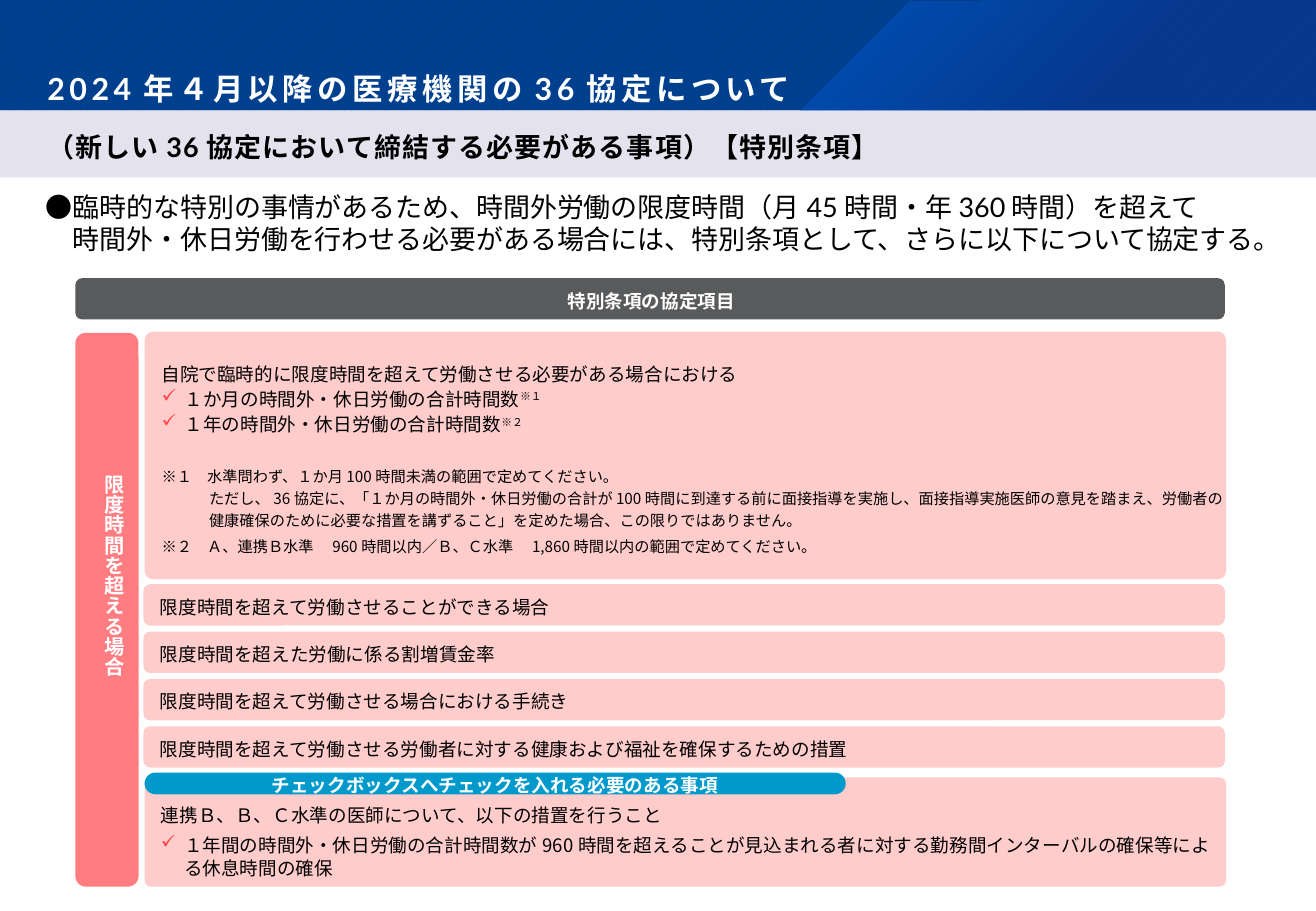
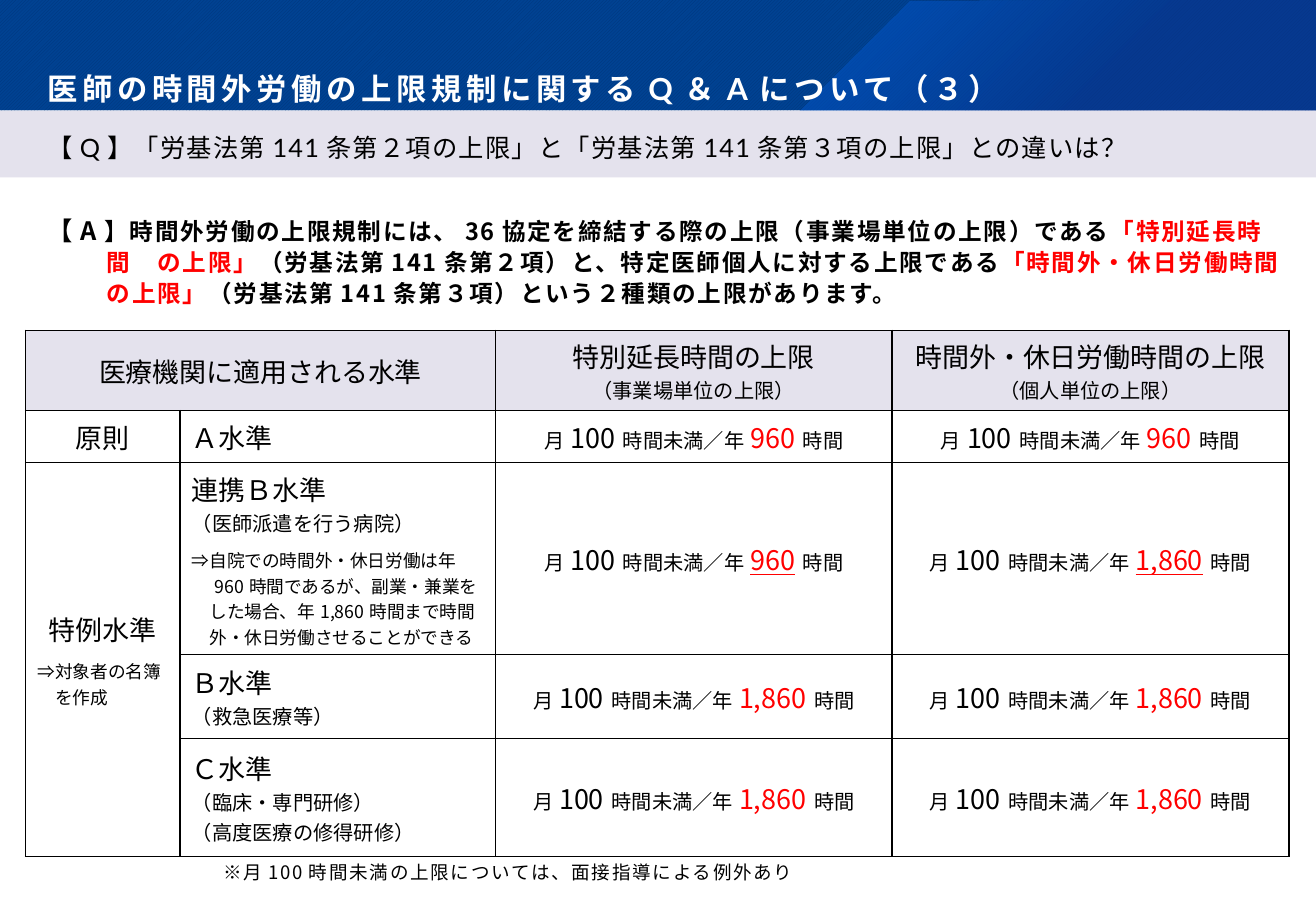
from dataclasses import dataclass

from lxml import etree
from pptx import Presentation
from pptx.dml.color import RGBColor
from pptx.enum.dml import MSO_PATTERN
from pptx.enum.shapes import MSO_SHAPE
from pptx.enum.text import MSO_ANCHOR, PP_ALIGN
from pptx.oxml import parse_xml
from pptx.oxml.ns import nsdecls, qn
from pptx.util import Inches, Pt

RECT, ROUND = MSO_SHAPE.RECTANGLE, MSO_SHAPE.ROUNDED_RECTANGLE
MID, LOW, TOP = MSO_ANCHOR.MIDDLE, MSO_ANCHOR.BOTTOM, MSO_ANCHOR.TOP
LEFT, CENTER = PP_ALIGN.LEFT, PP_ALIGN.CENTER
DIAG = MSO_PATTERN.DARK_UPWARD_DIAGONAL
WIDE, HIGH, BAND = 10.83, 7.5, 0.91
SANS, LATO = "Noto Sans CJK JP", "Lato"
BLACK, WHITE, RED = "000000", "FFFFFF", "FF0000"
LILAC, PINK, ROSE = "E4E2ED", "FFCCCC", "FF7C80"
GRAY, BLUE, TICK = "585A5C", "0099CC", "FF4347"
INSET = (0.12, 0.08, 0.1, 0.05)


@dataclass
class Run:
    """A piece of text in one format."""
    text: str
    size: float = 11
    color: str = BLACK
    bold: bool = False
    font: str = SANS
    gap: float = 0
    under: bool = False
    base: int = 0


@dataclass
class Para:
    """A paragraph with its spacing and indents."""
    runs: list
    align: int = LEFT
    line: object = None
    before: float = 0
    after: float = 0
    left: float = 0
    first: float = 0
    mark: str = ""


def rgb(code):
    """Return the colour for a hex string."""
    return RGBColor.from_string(code)


def style(run, look):
    """Format a run."""
    font = run.font
    font.size, font.bold, font.name = Pt(look.size), look.bold, look.font
    font.color.rgb = rgb(look.color)
    font.underline = look.under
    props = font._element
    if look.gap:
        props.set("spc", str(round(look.gap * 100)))
    if look.base:
        props.set("baseline", str(look.base * 1000))
    east = etree.Element(qn("a:ea"), typeface=SANS)
    props.find(qn("a:latin")).addnext(east)


def write(frame, paras):
    """Fill a text frame with paragraphs."""
    for i, para in enumerate(paras):
        item = frame.paragraphs[0] if i == 0 else frame.add_paragraph()
        item.alignment = para.align
        item.space_before, item.space_after = Pt(para.before), Pt(para.after)
        if para.line:
            item.line_spacing = para.line
        props = item._p.get_or_add_pPr()
        props.set("marL", str(Inches(para.left)))
        props.set("indent", str(Inches(para.first)))
        if para.mark:
            color = etree.SubElement(props, qn("a:buClr"))
            etree.SubElement(color, qn("a:srgbClr"), val=TICK)
            etree.SubElement(props, qn("a:buChar"), char=para.mark)
        for look in para.runs:
            run = item.add_run()
            run.text = look.text
            style(run, look)


def fit(frame, paras, anchor, inset):
    """Set the margins and anchor of a frame and fill it."""
    frame.word_wrap, frame.vertical_anchor = True, anchor
    (frame.margin_left, frame.margin_top,
     frame.margin_right, frame.margin_bottom) = map(Inches, inset)
    write(frame, paras)


def box(slide, at, fill, paras=(), kind=ROUND, adj=None, anchor=MID, inset=INSET):
    """Add a filled shape with text."""
    shape = slide.shapes.add_shape(kind, *map(Inches, at))
    shape.shadow.inherit = False
    shape.fill.solid()
    shape.fill.fore_color.rgb = rgb(fill)
    shape.line.fill.background()
    if adj is not None:
        shape.adjustments[0] = adj
    fit(shape.text_frame, paras, anchor, inset)
    return shape


def label(slide, at, paras, anchor=TOP, inset=(0.1, 0.05, 0.1, 0.05)):
    """Add a text box."""
    frame = slide.shapes.add_textbox(*map(Inches, at)).text_frame
    fit(frame, paras, anchor, inset)
    return frame


def sheen(slide):
    """Add the slanted gradient at the right of the title band."""
    pen = slide.shapes.build_freeform(Inches(7.49), Inches(0.01))
    spots = [(WIDE, 0), (WIDE, BAND), (6.58, BAND)]
    pen.add_line_segments([(Inches(x), Inches(y)) for x, y in spots])
    shape = pen.convert_to_shape()
    shape.shadow.inherit = False
    shape.line.fill.background()
    shape.fill.gradient()
    stops = "".join(
        f'<a:gs pos="{pos}000"><a:srgbClr val="{color}">'
        f'<a:alpha val="{alpha}000"/></a:srgbClr></a:gs>'
        for pos, color, alpha in [(0, "0064DF", 50), (62, "0C338E", 55)])
    grad = parse_xml(
        f'<a:gradFill {nsdecls("a")} rotWithShape="1"><a:gsLst>{stops}</a:gsLst>'
        '<a:path path="circle"><a:fillToRect r="100000" b="100000"/></a:path>'
        '</a:gradFill>')
    props = shape._element.spPr
    props.replace(props.find(qn("a:gradFill")), grad)


def start(deck, title, lead):
    """Add a slide with its title band and lead band."""
    slide = deck.slides.add_slide(deck.slide_layouts[6])
    band = box(slide, (0, 0, WIDE, BAND), BLUE, kind=RECT)
    band.fill.patterned()
    band.fill.pattern = DIAG
    band.fill.fore_color.rgb = rgb("003579")
    band.fill.back_color.rgb = rgb("004292")
    sheen(slide)
    head = Run(title, 18, WHITE, True, LATO, 2.7)
    label(slide, (0, 0, WIDE, BAND), [Para([head], line=0.9)], LOW,
          (0.39, 0.36, 0.36, 0.14))
    box(slide, (0, BAND, WIDE, 0.55), LILAC, [Para([lead])], RECT,
        inset=(0.39, 0.05, 0.39, 0))
    return slide


def limits(slide, left, top, wide):
    """Add the box on the hour limits with its notes."""
    row = Pt(15)
    ticks = [Para([Run(text), Run(note, base=30)], line=row,
                  left=0.19, first=-0.19, mark="✓")
             for text, note in [("１か月の時間外・休日労働の合計時間数", "※１"),
                                ("１年の時間外・休日労働の合計時間数", "※２")]]
    paras = [
        Para([Run("自院で臨時的に限度時間を超えて労働させる必要がある場合における")], line=row),
        *ticks,
        Para([Run("※１　水準問わず、１か月100時間未満の範囲で定めてください。", 9)],
             line=row, before=15, left=0.29, first=-0.29),
        Para([Run("ただし、36協定に、「１か月の時間外・休日労働の合計が100時間に到達する前に"
                  "面接指導を実施し、面接指導実施医師の意見を踏まえ、労働者の"
                  "健康確保のために必要な措置を講ずること」を定めた場合、この限りではありません。", 9)],
             line=Pt(13), left=0.39),
        Para([Run("※２　Ａ、連携Ｂ水準　960時間以内／Ｂ、Ｃ水準　"
                  "1,860時間以内の範囲で定めてください。", 9)], line=row)]
    box(slide, (left, top, wide, 2.04), PINK, paras, adj=0.034,
        inset=(0.12, 0.08, 0, 0.05))


def checks(slide, left, top, wide):
    """Add the box on the checkbox item with its pill heading."""
    line = Pt(13.6)
    box(slide, (left, top + 0.04, wide, 0.9), PINK, [
        Para([Run("連携Ｂ、Ｂ、Ｃ水準の医師について、以下の措置を行うこと")], line=line),
        Para([Run("１年間の時間外・休日労働の合計時間数が960時間を超えることが見込まれる者に対する"
                  "勤務間インターバルの確保等による休息時間の確保")],
             line=line, before=4, left=0.19, first=-0.19, mark="✓")],
        adj=0.058, anchor=LOW, inset=(0.12, 0.08, 0.08, 0.05))
    pill = Run("チェックボックスへチェックを入れる必要のある事項", 11, WHITE, True, "Calibri")
    box(slide, (left, top, 5.77, 0.18), BLUE, [Para([pill], CENTER)], adj=0.5,
        inset=(0.1, 0.08, 0.1, 0.05))


def clauses(slide, left, top):
    """Add the panel of special clause items."""
    wide, inner = 8.9, left + 0.57
    head = Run("特別条項の協定項目", 11, WHITE, True)
    box(slide, (left, top, 9.46, 0.34), GRAY, [Para([head], CENTER)])
    box(slide, (left, top + 0.45, 0.52, 4.56), ROSE)
    side = Run("限度時間を超える場合", 12, WHITE, True)
    frame = label(slide, (left - 0.1, top + 1.52, 0.57, 2.06), [Para([side], CENTER)])
    frame._txBody.bodyPr.set("vert", "eaVert")
    limits(slide, inner, top + 0.44, wide)
    items = ["限度時間を超えて労働させることができる場合",
             "限度時間を超えた労働に係る割増賃金率",
             "限度時間を超えて労働させる場合における手続き",
             "限度時間を超えて労働させる労働者に対する健康および福祉を確保するための措置"]
    for i, text in enumerate(items):
        box(slide, (inner - 0.01, top + 2.52 + 0.39 * i, wide, 0.34), PINK,
            [Para([Run(text)])])
    checks(slide, inner, top + 4.07, wide)


def hours(year, under=False):
    """Return the cell text for a monthly and yearly limit."""
    return [Para([Run("月", 12), Run("100", 16), Run("時間未満／年", 12),
                  Run(year, 16, RED, under=under), Run("時間", 12)], CENTER)]


def lines(name, *subs, align=LEFT, after=0):
    """Return a large line and the small lines under it."""
    small = [Para([Run(text, 12)], align) for text in subs]
    paras = [Para([Run(name, 16)], align), *small]
    paras[-1].after = after
    return paras


def notes(*texts):
    """Return lines of fine print."""
    return [Para([Run(text, 10.5)]) for text in texts]


def edge(cell):
    """Draw a thin black border around a cell."""
    props = cell._tc.get_or_add_tcPr()
    for i, side in enumerate(("lnL", "lnR", "lnT", "lnB")):
        props.insert(i, parse_xml(
            f'<a:{side} {nsdecls("a")} w="12700"><a:solidFill>'
            f'<a:srgbClr val="{BLACK}"/></a:solidFill></a:{side}>'))


def levels(slide, left, top):
    """Add the table of limits by level."""
    cols, rows = [1.27, 2.6, 3.26, 3.27], [0.66, 0.43, 1.58, 0.69, 0.97]
    cells = [
        [lines("医療機関に適用される水準", align=CENTER), [],
         lines("特別延長時間の上限", "（事業場単位の上限）", align=CENTER),
         lines("時間外・休日労働時間の上限", "（個人単位の上限）", align=CENTER)],
        [lines("原則", align=CENTER), lines("Ａ水準"), hours("960"), hours("960")],
        [lines("特例水準", align=CENTER, after=6) + notes("⇒対象者の名簿", "　を作成"),
         lines("連携Ｂ水準", "（医師派遣を行う病院）", after=6)
         + notes("⇒自院での時間外・休日労働は年", "　960時間であるが、副業・兼業を",
                 "　した場合、年1,860時間まで時間", "　外・休日労働させることができる"),
         hours("960", True), hours("1,860", True)],
        [[], lines("Ｂ水準", "（救急医療等）"), hours("1,860"), hours("1,860")],
        [[], lines("Ｃ水準", "（臨床・専門研修）", "（高度医療の修得研修）"),
         hours("1,860"), hours("1,860")]]
    at = map(Inches, (left, top, sum(cols), sum(rows)))
    table = slide.shapes.add_table(len(rows), len(cols), *at).table
    table.first_row = table.horz_banding = False
    for col, wide in zip(table.columns, cols):
        col.width = Inches(wide)
    for r, row in enumerate(cells):
        table.rows[r].height = Inches(rows[r])
        for c, paras in enumerate(row):
            cell = table.cell(r, c)
            cell.vertical_anchor = MID
            cell.fill.solid()
            cell.fill.fore_color.rgb = rgb(WHITE if r else LILAC)
            edge(cell)
            write(cell.text_frame, paras)
    table.cell(0, 0).merge(table.cell(0, 1))
    table.cell(2, 0).merge(table.cell(4, 0))


def clause_slide(deck):
    """Build the slide on special clauses."""
    lead = Run("（新しい36協定において締結する必要がある事項）【特別条項】",
               16, BLACK, True, LATO, 0.7)
    slide = start(deck, "2024年４月以降の医療機関の36協定について", lead)
    texts = ["●臨時的な特別の事情があるため、時間外労働の限度時間（月45時間・年360時間）を超えて",
             "　時間外・休日労働を行わせる必要がある場合には、特別条項として、さらに以下について協定する。"]
    label(slide, (0.28, 1.52, 10.55, 0.73),
          [Para([Run(text, 16, font=LATO)], line=1.0) for text in texts])
    clauses(slide, 0.62, 2.29)


def answer_slide(deck):
    """Build the question and answer slide."""
    lead = Run("【Q】「労基法第141条第２項の上限」と「労基法第141条第３項の上限」との違いは？",
               15, font=LATO, gap=0.7)
    slide = start(deck, "医師の時間外労働の上限規制に関するQ＆Aについて（３）", lead)
    parts = [("【A", 15, BLACK),
             ("】時間外労働の上限規制には、36協定を締結する際の上限（事業場単位の上限）である", 14, BLACK),
             ("「特別延長時間　の上限」", 14, RED),
             ("（労基法第141条第２項）と、特定医師個人に対する上限である", 14, BLACK),
             ("「時間外・休日労働時間の上限」", 14, RED),
             ("（労基法第141条第３項）という２種類の上限があります。", 14, BLACK)]
    runs = [Run(*part, bold=True, gap=1) for part in parts]
    label(slide, (0, 1.52, 10.97, 1.24),
          [Para(runs, line=1.08, left=0.49, first=-0.49)], MID,
          (0.39, 0.16, 0.39, 0.16))
    levels(slide, 0.21, 2.72)
    note = Run("※月100時間未満の上限については、面接指導による例外あり", gap=1)
    label(slide, (1.74, 7.04, 5.03, 0.29), [Para([note])])


def main():
    """Build and save the deck."""
    deck = Presentation()
    deck.slide_width, deck.slide_height = Inches(WIDE), Inches(HIGH)
    clause_slide(deck)
    answer_slide(deck)
    deck.save("out.pptx")


if __name__ == "__main__":
    main()
